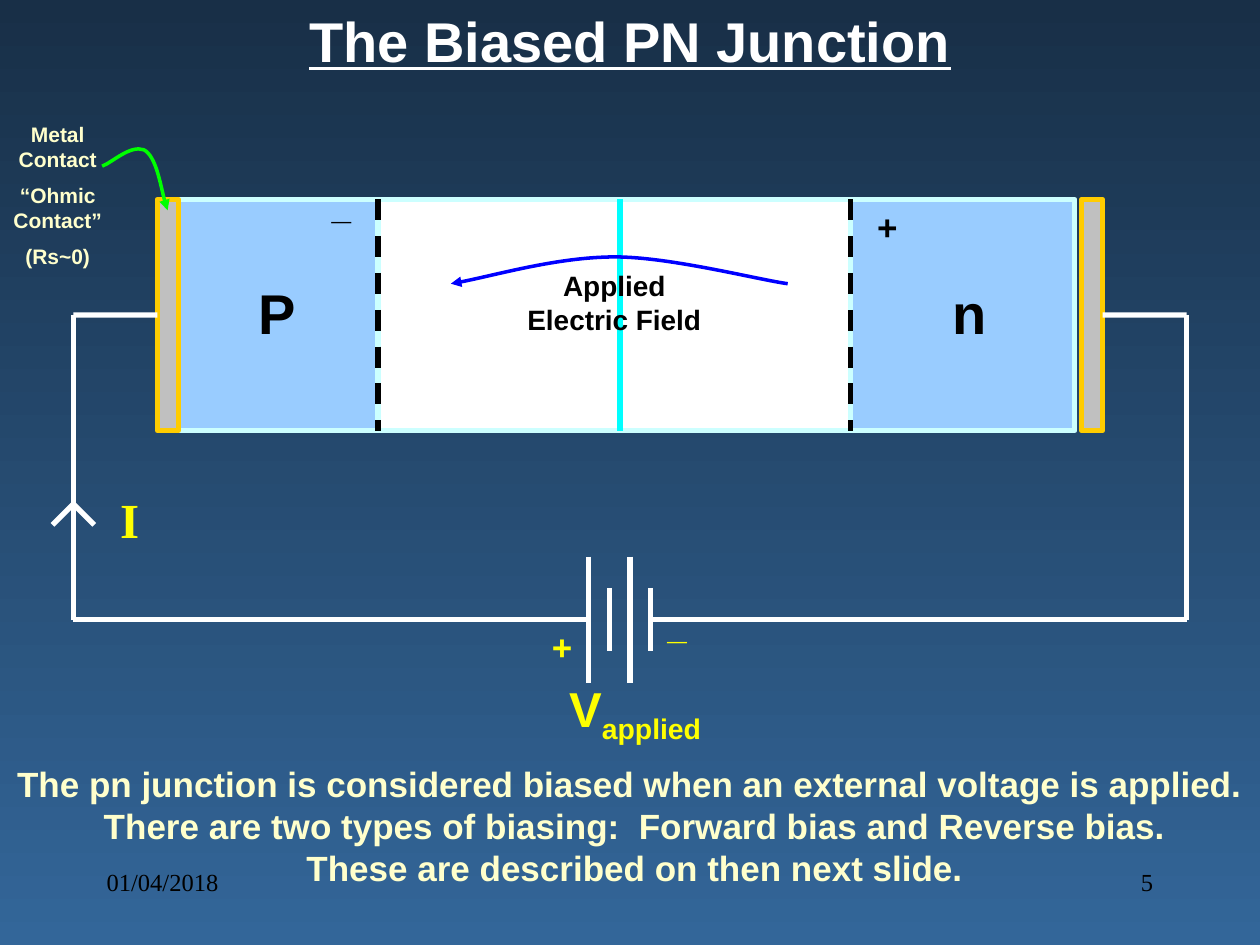
from lxml.etree import SubElement
from pptx import Presentation
from pptx.dml.color import RGBColor
from pptx.enum.dml import MSO_LINE
from pptx.enum.shapes import MSO_CONNECTOR as Conn, MSO_SHAPE as Kind
from pptx.enum.text import MSO_ANCHOR as Anchor, MSO_AUTO_SIZE as Auto, PP_ALIGN as Align
from pptx.oxml.ns import qn
from pptx.util import Cm, Pt

# Content: text, box (left, top, width, height in cm), format
TITLE = "The Biased PN Junction"
YELLOW, CREAM, WHITE, BLACK = "FFFF00", "FFFFCC", "FFFFFF", "000000"
SERIF = "Times New Roman"
LABELS = [
    (["P"], (4.66, 5.5, 1.85, 1.6), dict(size=32)),
    (["n"], (18.63, 5.5, 1.85, 1.6), dict(size=32)),
    (["+"], (17.36, 4.02, 1.06, 1.09), {}),
    (["_"], (6.35, 3.6, 1.06, 1.09), {}),
    (["Applied Electric Field"], (10.16, 5.29, 4.45, 1.63), dict(size=16)),
    (["Metal Contact", "“Ohmic Contact”", "(Rs~0)"], (0, 2.33, 2.33, 3.3),
     dict(size=12, color=CREAM, gap=6)),
    (["+"], (10.8, 12.49, 1.06, 1.09), dict(color=YELLOW)),
    (["_"], (13.12, 12.07, 1.06, 1.09), dict(color=YELLOW)),
    (["V"], (10.58, 13.55, 4.45, 1.44), dict(size=28, color=YELLOW, sub="applied")),
    (["I"], (1.69, 9.74, 1.85, 1.44), dict(size=28, color=YELLOW, font=SERIF)),
    (["The pn junction is considered biased when an external voltage is applied.  "
      "There are two types of biasing:  Forward bias and Reverse bias.",
      " These are described on then next slide."], (0, 15.24, 25.4, 2.79), dict(color=CREAM)),
    (["01/04/2018"], (1.9, 17.36, 5.3, 1.27),
     dict(size=14, font=SERIF, bold=False, align=Align.LEFT)),
    (["5"], (18.2, 17.36, 5.3, 1.27),
     dict(size=14, font=SERIF, bold=False, align=Align.RIGHT)),
]

# Device and circuit measures in cm
TOP, TALL = 4.02, 4.66
EDGES = [3.6, 7.62, 12.5, 17.15, 21.67]
FILLS = ["99CCFF", WHITE, WHITE, "99CCFF"]
PLATE = 0.43
LEFT, RIGHT = 1.48, 23.92
MID, LOW = TOP + TALL / 2, 12.49
CELL, STEP = 11.86, 0.42
HALVES = [1.27, 0.64, 1.27, 0.64]
TIP, BARB = 10.16, 0.42

# Bezier points: start, then three per segment
FIELD = [(15.88, 5.72), (15.29, 5.64), (13.51, 5.18), (12.4, 5.18),
         (11.25, 5.18), (9.78, 5.61), (9.09, 5.72)]
POINTER = [(2.06, 3.35), (2.26, 3.28), (2.62, 2.92), (2.9, 3.02),
           (3.15, 3.15), (3.28, 3.99), (3.38, 4.24)]


def rgb(code):
    return RGBColor.from_string(code)


def write(frame, lines, size=20, color=BLACK, font="Arial", bold=True, under=False,
          align=Align.CENTER, gap=0, sub=None):
    frame.word_wrap = True
    frame.auto_size = Auto.NONE
    frame.vertical_anchor = Anchor.TOP
    for i, line in enumerate(lines):
        para = frame.paragraphs[0] if i == 0 else frame.add_paragraph()
        para.alignment = align
        para.space_before = Pt(gap if i else 0)
        for part in filter(None, (line, sub)):
            run = para.add_run()
            run.text = part
            face = run.font
            face.size, face.name = Pt(size), font
            face.bold, face.underline = bold, under
            face.color.rgb = rgb(color)
            if part == sub:
                run._r.get_or_add_rPr().set("baseline", "-25000")


def block(x, wide, fill, edge):
    box = shapes.add_shape(Kind.RECTANGLE, Cm(x), Cm(TOP), Cm(wide), Cm(TALL))
    box.shadow.inherit = False
    box.fill.solid()
    box.fill.fore_color.rgb = rgb(fill)
    box.line.color.rgb = rgb(edge)
    box.line.width = Pt(3)
    return box


def line(a, b, color=WHITE, dash=None):
    link = shapes.add_connector(Conn.STRAIGHT, *map(Cm, (*a, *b)))
    link.line.color.rgb = rgb(color)
    link.line.width = Pt(3)
    if dash:
        link.line.dash_style = dash
    SubElement(link._element.spPr, qn("a:effectLst"))
    return link


def curve(points, color):
    (x, y), *rest = [(Cm(x), Cm(y)) for x, y in points]
    pen = shapes.build_freeform(x, y)
    pen.add_line_segments(rest, close=False)
    arc = pen.convert_to_shape()
    arc.shadow.inherit = False
    arc.fill.background()
    arc.line.color.rgb = rgb(color)
    arc.line.width = Pt(2)
    SubElement(arc.line._get_or_add_ln(), qn("a:tailEnd"), type="triangle")
    # Turn each three straight steps into one cubic segment
    track = next(arc._element.iter(qn("a:path")))
    steps = track.findall(qn("a:lnTo"))
    for i in range(0, len(steps), 3):
        bend = SubElement(track, qn("a:cubicBezTo"))
        for step in steps[i:i + 3]:
            bend.append(step[0])
            track.remove(step)


# Slide, background and title
deck = Presentation()
deck.slide_width, deck.slide_height = Cm(25.4), Cm(19.05)
slide = deck.slides.add_slide(deck.slide_layouts[5])
shapes = slide.shapes
back = slide.background.fill
back.gradient()
back.gradient_angle = 270
for stop, code, at in zip(back.gradient_stops, ("182F47", "336699"), (0, 1)):
    stop.color.rgb, stop.position = rgb(code), at
head = shapes.title
head.left, head.top, head.width, head.height = map(Cm, (2.54, 0, 20.32, 1.6))
write(head.text_frame, [TITLE], size=32, color=WHITE, under=True)

# Semiconductor regions and their borders
for x, end, fill in zip(EDGES, EDGES[1:], FILLS):
    block(x, end - x, fill, "CCFFFF")
for x, color, dash in zip(EDGES[1:4], (BLACK, "00FFFF", BLACK),
                          (MSO_LINE.DASH, None, MSO_LINE.DASH)):
    line((x, TOP), (x, TOP + TALL), color, dash)

# Metal contacts, each wired to the battery
ends = [(EDGES[0] - PLATE, EDGES[0] - PLATE, LEFT, CELL, 1),
        (21.8, 21.8 + PLATE, RIGHT, CELL + 3 * STEP, 3)]
for x, side, far, pole, site in ends:
    plate = block(x, PLATE, "C0C0C0", "FFCC00")
    line((side, MID), (far, MID)).begin_connect(plate, site)
    line((far, MID), (far, LOW))
    line((far, LOW), (pole, LOW))

# Battery plates and current arrow
for i, half in enumerate(HALVES):
    x = CELL + i * STEP
    line((x, LOW - half), (x, LOW + half))
for way in (-1, 1):
    line((LEFT, TIP), (LEFT + way * BARB, TIP + BARB))

# Curved arrows and labels
curve(FIELD, "0000FF")
curve(POINTER, "00FF00")
for lines, box, style in LABELS:
    write(shapes.add_textbox(*map(Cm, box)).text_frame, lines, **style)

deck.save("out.pptx")
